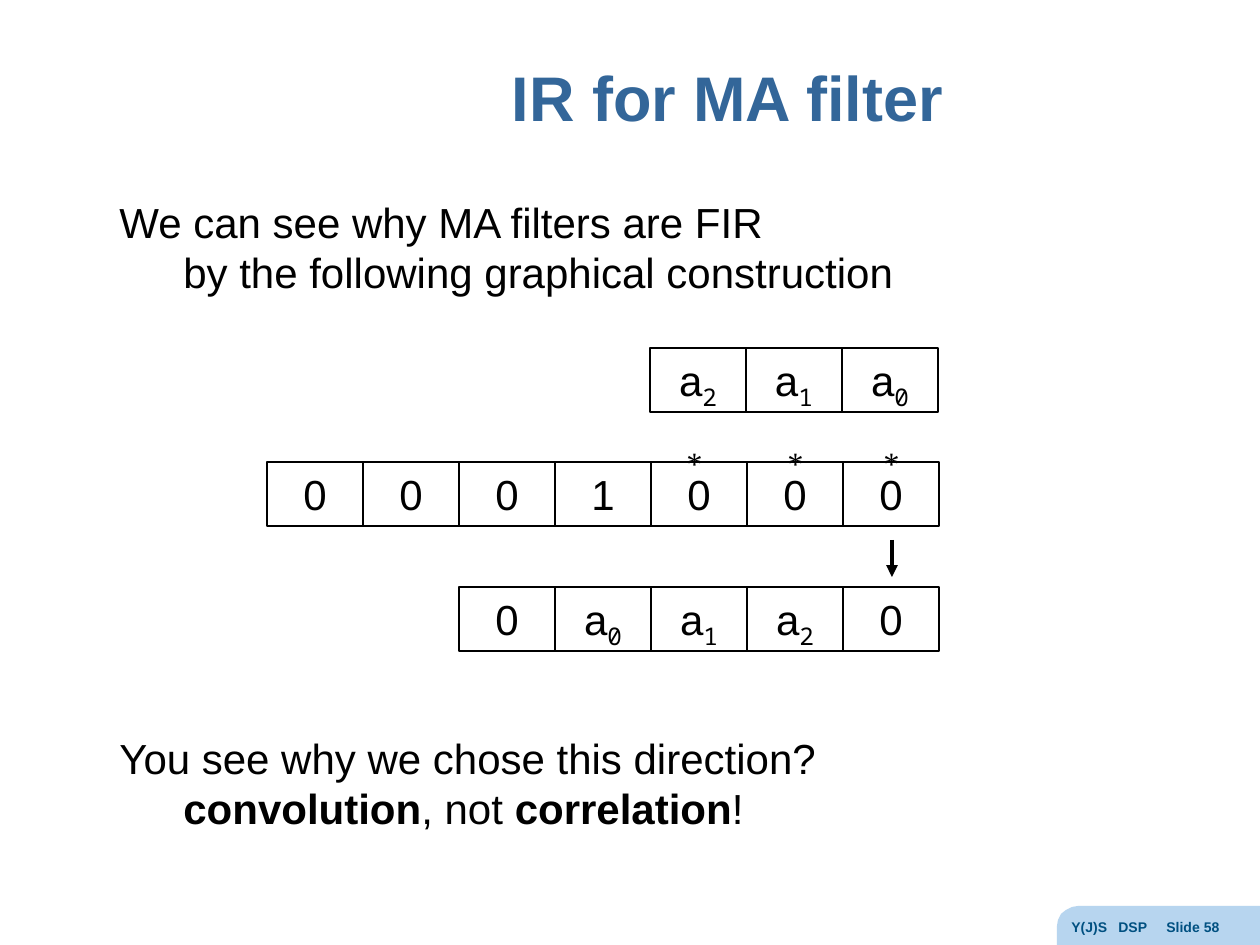
from lxml import etree
from pptx import Presentation, util as u
from pptx.dml.color import RGBColor
from pptx.enum import shapes, text
from pptx.oxml.ns import qn

PX = 914400 / 126
COLORS = {"ink": "000000", "title": "336699", "tab": "B7D5EF", "footer": "005081"}

TITLE = "IR for MA filter"
FOOTER = "Y(J)S\tDSP\tSlide 58"
# Each body: left, top, then lines of (text, bold) runs
BODIES = [
    (107, 190, [[("We can see why MA filters are FIR", False)],
                [("\tby the following graphical construction", False)]]),
    (107, 726, [[("You see why we chose this direction?", False)],
                [("\t", False), ("convolution", True), (", not ", False),
                 ("correlation", True), ("!", False)]]),
]
# Each row: left, top, cells; a second character is a subscript
ROWS = [
    (650, 348, ["a2", "a1", "a0"]),
    (267, 462, ["0", "0", "0", "1", "0", "0", "0"]),
    (459, 587, ["0", "a0", "a1", "a2", "0"]),
]
CELL_W, CELL_H = 96, 64
STAR_LEFTS, STAR_TOP, STAR_SIZE = [674, 775, 871], 420, 48
ARROW_X, ARROW_TOP, ARROW_BOTTOM = 892, 540, 577
FOOTER_TAB = [(1260, 906), (1260, 945), (1057, 945), (1057, 926), (1058, 920),
              (1061, 914), (1066, 910), (1072, 907), (1078, 906)]


def px(n):
    return u.Emu(round(n * PX))


def rgb(name):
    return RGBColor.from_string(COLORS[name])


def add_run(p, words, size, color="ink", font="Arial", bold=False, baseline=0):
    r = p.add_run()
    r.text = words
    f = r.font
    f.size, f.name, f.bold = u.Pt(size), font, bold
    f.color.rgb = rgb(color)
    if baseline:
        r._r.get_or_add_rPr().set("baseline", str(baseline * 1000))


def add_text_box(left, top, width, height):
    tf = slide.shapes.add_textbox(px(left), px(top), px(width), px(height)).text_frame
    tf.word_wrap = True
    return tf


def space_before(p, percent):
    """Paragraph spacing as a share of the text size."""
    el = etree.SubElement(p._p.get_or_add_pPr(), qn("a:spcBef"))
    etree.SubElement(el, qn("a:spcPct")).set("val", str(percent * 1000))


def set_tabs(p, *stops):
    tabs = etree.SubElement(p._p.get_or_add_pPr(), qn("a:tabLst"))
    for stop in stops:
        tab = etree.SubElement(tabs, qn("a:tab"))
        tab.set("pos", str(px(stop)))
        tab.set("algn", "l")


def add_cell(left, top, label):
    sp = slide.shapes.add_shape(shapes.MSO_SHAPE.RECTANGLE, px(left), px(top),
                                px(CELL_W), px(CELL_H))
    sp.shadow.inherit = False
    sp.fill.background()
    sp.line.color.rgb = rgb("ink")
    sp.line.width = u.Pt(0.75)
    tf = sp.text_frame
    tf.vertical_anchor = text.MSO_ANCHOR.TOP
    p = tf.paragraphs[0]
    p.alignment = text.PP_ALIGN.CENTER
    space_before(p, 50)
    add_run(p, label[0], 24)
    if label[1:]:
        add_run(p, label[1:], 24, font="Noto Sans Mono", baseline=-25)


prs = Presentation()
prs.slide_width, prs.slide_height = px(1260), px(945)
slide = prs.slides.add_slide(prs.slide_layouts[6])

builder = slide.shapes.build_freeform(*FOOTER_TAB[0], scale=PX)
builder.add_line_segments(FOOTER_TAB[1:], close=True)
sp = builder.convert_to_shape()
sp.shadow.inherit = False
sp.fill.solid()
sp.fill.fore_color.rgb = rgb("tab")
sp.line.fill.background()

tf = add_text_box(267, 23, 921, 157)
tf.vertical_anchor = text.MSO_ANCHOR.MIDDLE
p = tf.paragraphs[0]
p.alignment = text.PP_ALIGN.CENTER
p.line_spacing = 0.9
add_run(p, TITLE, 36, "title", bold=True)

p = add_text_box(1059, 912, 201, 33).paragraphs[0]
set_tabs(p, 47, 95)
add_run(p, FOOTER, 8, "footer", bold=True)

for left, top, cells in ROWS:
    for i, label in enumerate(cells):
        add_cell(left + i * CELL_W, top, label)

for left in STAR_LEFTS:
    p = add_text_box(left, STAR_TOP, STAR_SIZE, STAR_SIZE).paragraphs[0]
    p.line_spacing = 0.8
    space_before(p, 30)
    add_run(p, "*", 32, font="Times New Roman", baseline=-10)

arrow = slide.shapes.add_connector(shapes.MSO_CONNECTOR.STRAIGHT, px(ARROW_X),
                                   px(ARROW_TOP), px(ARROW_X), px(ARROW_BOTTOM))
arrow.line.color.rgb = rgb("ink")
arrow.line.width = u.Pt(2.25)
etree.SubElement(arrow.line._get_or_add_ln(), qn("a:tailEnd")).set("type", "triangle")
etree.SubElement(arrow._element.spPr, qn("a:effectLst"))

for left, top, lines in BODIES:
    tf = add_text_box(left, top, 992, 115)
    for i, runs in enumerate(lines):
        p = tf.add_paragraph() if i else tf.paragraphs[0]
        set_tabs(p, 64)
        for words, bold in runs:
            add_run(p, words, 24, bold=bold)

prs.save("out.pptx")
